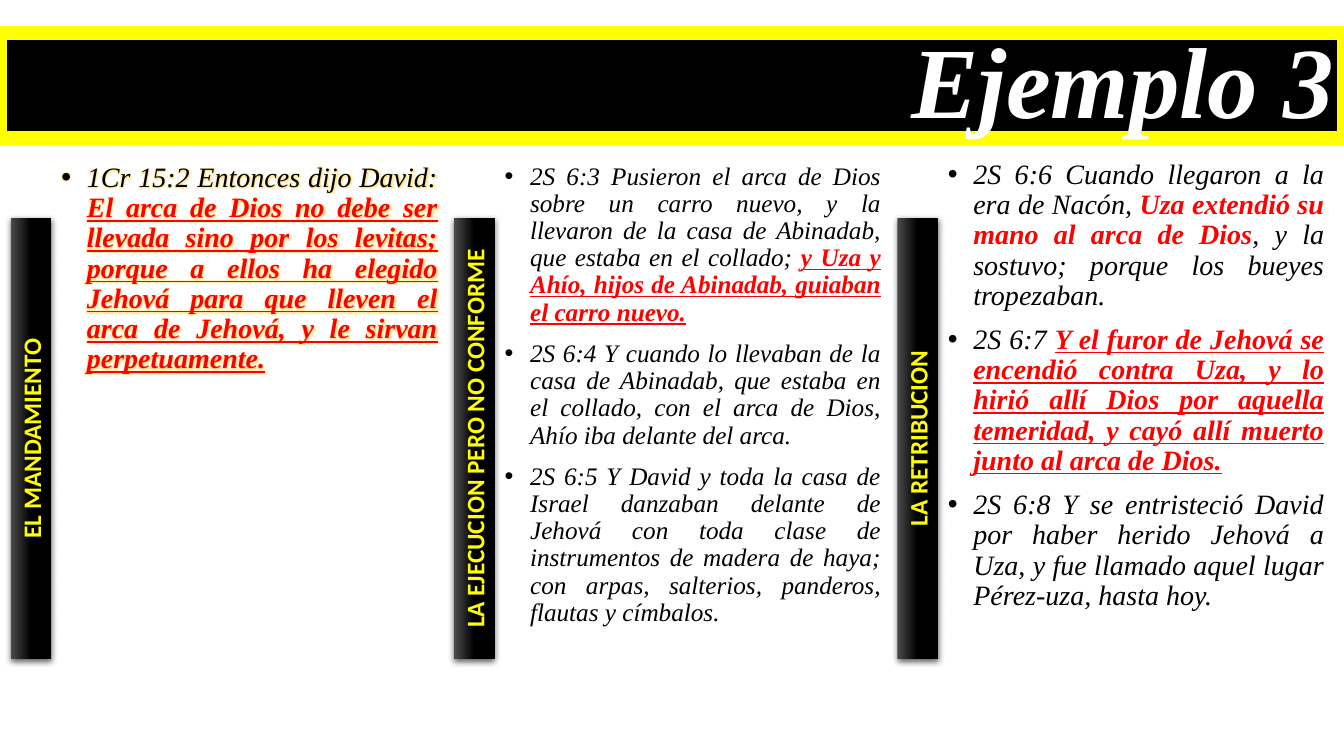
from lxml.etree import SubElement
from pptx import Presentation
from pptx.dml.color import RGBColor
from pptx.enum.shapes import MSO_SHAPE
from pptx.enum.text import MSO_ANCHOR, PP_ALIGN
from pptx.oxml import parse_xml
from pptx.oxml.ns import nsdecls, qn
from pptx.util import Cm, Pt

BLACK = RGBColor(0x00, 0x00, 0x00)
GREY = RGBColor(0x4B, 0x4B, 0x4B)
WHITE = RGBColor(0xFF, 0xFF, 0xFF)
YELLOW = RGBColor(0xFF, 0xFF, 0x00)
RED = RGBColor(0xFF, 0x00, 0x00)

GLOW = (f'<a:effectLst {nsdecls("a")}><a:glow rad="63500"><a:srgbClr val="FFC000">'
        '<a:alpha val="40000"/></a:srgbClr></a:glow></a:effectLst>')
SHADOW = (f'<a:effectLst {nsdecls("a")}><a:outerShdw blurRad="57150" dist="19050" '
          'dir="5400000" algn="ctr" rotWithShape="0"><a:srgbClr val="000000">'
          '<a:alpha val="63000"/></a:srgbClr></a:outerShdw></a:effectLst>')

# Run formats
VERSE = {"name": "Times New Roman", "italic": True}
PLAIN = VERSE | {"bold": False}
BOLD = VERSE | {"bold": True}
UNDERLINED = BOLD | {"underline": True}
LABEL = {"name": "Calibri", "bold": True, "size": Pt(18)}
TITLE = BOLD | {"size": Pt(72)}

# Columns: label, top of the verses, text size, glow, verses made of runs
COLUMNS = [
    ("EL MANDAMIENTO", 3.99, 20, True, [
        [("1Cr 15:2 Entonces dijo David: ", PLAIN, BLACK),
         ("El arca de Dios no debe ser llevada sino por los levitas; porque a ellos ha "
          "elegido Jehová para que lleven el arca de Jehová, y le sirvan perpetuamente.",
          UNDERLINED, RED)],
    ]),
    ("LA EJECUCION PERO NO CONFORME", 3.99, 18, False, [
        [("2S 6:3 Pusieron el arca de Dios sobre un carro nuevo, y la llevaron de la casa "
          "de Abinadab, que estaba en el collado; ", PLAIN, BLACK),
         ("y Uza y Ahío, hijos de Abinadab, guiaban el carro nuevo.", UNDERLINED, RED)],
        [("2S 6:4 Y cuando lo llevaban de la casa de Abinadab, que estaba en el collado, "
          "con el arca de Dios, Ahío iba delante del arca.", PLAIN, BLACK)],
        [("2S 6:5 Y David y toda la casa de Israel danzaban delante de Jehová con toda "
          "clase de instrumentos de madera de haya; con arpas, salterios, panderos, "
          "flautas y címbalos.", PLAIN, BLACK)],
    ]),
    ("LA RETRIBUCION", 3.91, 20, False, [
        [("2S 6:6 Cuando llegaron a la era de Nacón, ", PLAIN, BLACK),
         ("Uza extendió su mano al arca de Dios", BOLD, RED),
         (", y la sostuvo; porque los bueyes tropezaban.", PLAIN, BLACK)],
        [("2S 6:7 ", PLAIN, BLACK),
         ("Y el furor de Jehová se encendió contra Uza, y lo hirió allí Dios por aquella "
          "temeridad, y cayó allí muerto junto al arca de Dios.", UNDERLINED, RED)],
        [("2S 6:8 Y se entristeció David por haber herido Jehová a Uza, y fue llamado "
          "aquel lugar Pérez-uza, hasta hoy.", PLAIN, BLACK)],
    ]),
]
PITCH = 11.17


def add_span(para, text, style, color):
    span = para.add_run()
    span.text = text
    for name, value in style.items():
        setattr(span.font, name, value)
    span.font.color.rgb = color
    return span


deck = Presentation()
deck.slide_width, deck.slide_height = Cm(33.87), Cm(19.05)
page = deck.slides.add_slide(deck.slide_layouts[6])

# Title band
band = page.shapes.add_shape(MSO_SHAPE.RECTANGLE, 0, Cm(0.84), Cm(33.87), Cm(2.64))
band.shadow.inherit = False
band.fill.solid()
band.fill.fore_color.rgb = BLACK
band.line.color.rgb = YELLOW
band.line.width = Pt(10)
band.text_frame.vertical_anchor = MSO_ANCHOR.MIDDLE
para = band.text_frame.paragraphs[0]
para.alignment = PP_ALIGN.RIGHT
para.line_spacing = 0.9
add_span(para, "Ejemplo 3", TITLE, WHITE)

for column, (label, top, size, glows, verses) in enumerate(COLUMNS):
    # Bulleted verses
    box = page.shapes.add_textbox(Cm(1.3 + column * PITCH), Cm(top), Cm(9.98), Cm(12.09))
    frame = box.text_frame
    frame.word_wrap = True
    for number, verse in enumerate(verses):
        para = frame.add_paragraph() if number else frame.paragraphs[0]
        para.alignment = PP_ALIGN.JUSTIFY
        para.line_spacing = 0.9
        para.space_before = Pt(10)
        props = para._p.get_or_add_pPr()
        props.set("marL", str(Cm(0.64)))
        props.set("indent", str(-Cm(0.64)))
        SubElement(props, qn("a:buFont"), typeface="Arial")
        SubElement(props, qn("a:buChar"), char="•")
        for text, style, color in verse:
            span = add_span(para, text, style | {"size": Pt(size)}, color)
            if glows:
                latin = span._r.get_or_add_rPr().find(qn("a:latin"))
                latin.addprevious(parse_xml(GLOW))

    # Upright label bar
    bar = page.shapes.add_shape(MSO_SHAPE.RECTANGLE, Cm(-4.78 + column * PITCH),
                                Cm(10.54), Cm(11.13), Cm(1.02))
    bar.rotation = 270
    bar.fill.gradient()
    bar.fill.gradient_angle = 270
    for stop, color, position in zip(bar.fill.gradient_stops, (GREY, BLACK), (0, 0.5)):
        stop.color.rgb = color
        stop.position = position
    bar.line.fill.background()
    bar._element.spPr.append(parse_xml(SHADOW))
    bar.text_frame.vertical_anchor = MSO_ANCHOR.TOP
    para = bar.text_frame.paragraphs[0]
    para.alignment = PP_ALIGN.CENTER
    add_span(para, label, LABEL, YELLOW)

deck.save("out.pptx")
